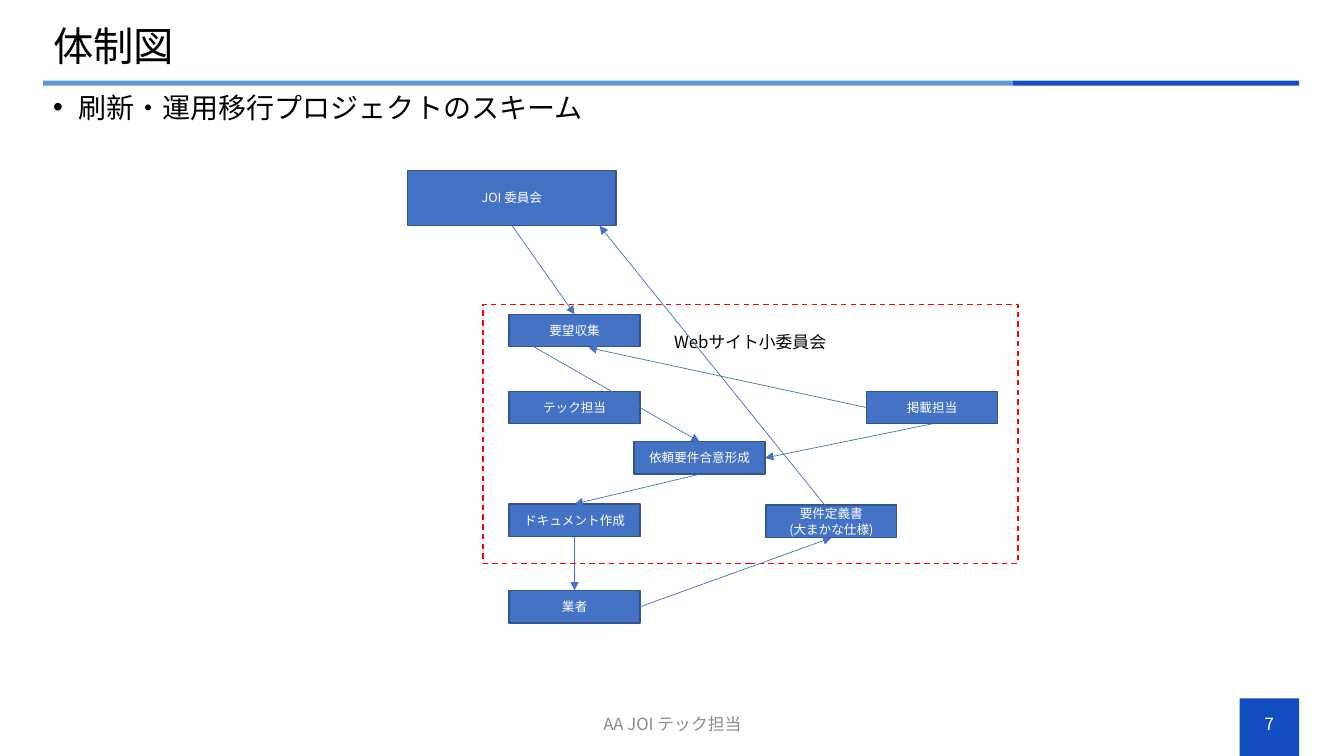
"""Build the project organisation slide."""
from lxml import etree
from pptx import Presentation
from pptx.dml.color import RGBColor
from pptx.enum import dml, shapes, text
from pptx.oxml import ns
from pptx.util import Cm, Pt

FONT = "Noto Sans CJK JP"
BLACK, WHITE, GREY = "000000", "FFFFFF", "8C8C8C"
NAVY, SKY, BLUE, EDGE, RED = "134EC1", "5B9BD5", "4472C4", "325491", "FF0000"
LEFT, CENTER = text.PP_ALIGN.LEFT, text.PP_ALIGN.CENTER
TOP, MIDDLE = text.MSO_ANCHOR.TOP, text.MSO_ANCHOR.MIDDLE

TITLE = ("体制図", (1.09, 0.53, 31.65, 1.4))
BULLET = ("刷新・運用移行プロジェクトのスキーム", (1.09, 2.24, 31.65, 1.4))
GROUP = ("Webサイト小委員会", (16.74, 8.23, 4.39, 0.77))
FOOTER = ("AA JOI テック担当", (11.23, 17.73, 11.43, 1.02))
NUMBER = ("7", (31.24, 17.73, 1.5, 1.02))

BARS = [
    (NAVY, (31.24, 17.6, 1.5, 1.45)),
    (SKY, (1.09, 2.03, 24.43, 0.13)),
    (NAVY, (25.52, 2.03, 7.22, 0.13)),
]
FRAME = (12.17, 7.67, 13.49, 6.53)

STEP_SIZE = (3.3, 0.82)
STEPS = {
    "テック担当": (12.83, 9.86),
    "掲載担当": (21.84, 9.86),
    "ドキュメント作成": (12.83, 12.7),
    "依頼要件合意形成": (15.98, 11.13),
    "業者": (12.83, 14.88),
    "要望収集": (12.83, 7.92),
    "要件定義書\n(大まかな仕様)": (19.3, 12.73),
}
COMMITTEE = ("JOI 委員会", (10.27, 4.29, 5.26, 1.39))
SPEC_SHEET = "要件定義書\n(大まかな仕様)"

ABOVE, BESIDE_LEFT, BELOW, BESIDE_RIGHT = range(4)
ARROWS = [
    ((13.23, 8.61), ("依頼要件合意形成", ABOVE)),
    (("依頼要件合意形成", BELOW), ("ドキュメント作成", ABOVE)),
    (("ドキュメント作成", BELOW), ("業者", ABOVE)),
    (("業者", BESIDE_RIGHT), (SPEC_SHEET, BELOW)),
    ((20.83, 12.78), (15.11, 5.69)),
    (("JOI 委員会", BELOW), ("要望収集", ABOVE)),
    (("掲載担当", BESIDE_LEFT), (14.83, 8.76)),
    (("掲載担当", BELOW), ("依頼要件合意形成", BESIDE_RIGHT)),
]


def color(value):
    return RGBColor.from_string(value)


def add_element(parent, tag, **attributes):
    return etree.SubElement(parent, ns.qn(tag), attributes)


def write(box, words, size, ink, align=LEFT, anchor=MIDDLE):
    frame = box.text_frame
    frame.text = words
    frame.word_wrap = True
    frame.vertical_anchor = anchor
    for para in frame.paragraphs:
        para.alignment = align
        for span in para.runs:
            span.font.size = Pt(size)
            span.font.name = FONT
            span.font.color.rgb = color(ink)
            add_element(span.font._element, "a:ea", typeface=FONT)


def add_label(page, item, size, ink, align=LEFT, anchor=MIDDLE):
    words, place = item
    box = page.shapes.add_textbox(*map(Cm, place))
    write(box, words, size, ink, align, anchor)
    return box


def add_rectangle(page, place, fill=None, edge=None):
    box = page.shapes.add_shape(shapes.MSO_SHAPE.RECTANGLE, *map(Cm, place))
    box.shadow.inherit = False
    if fill:
        box.fill.solid()
        box.fill.fore_color.rgb = color(fill)
    else:
        box.fill.background()
    if edge:
        box.line.color.rgb = color(edge)
        box.line.width = Pt(1)
    else:
        box.line.fill.background()
    return box


def add_arrow(page, start, end, boxes):
    arrow = page.shapes.add_connector(shapes.MSO_CONNECTOR.STRAIGHT, 0, 0, 0, 0)
    if start[0] in boxes:
        arrow.begin_connect(boxes[start[0]], start[1])
    else:
        arrow.begin_x, arrow.begin_y = map(Cm, start)
    if end[0] in boxes:
        arrow.end_connect(boxes[end[0]], end[1])
    else:
        arrow.end_x, arrow.end_y = map(Cm, end)
    arrow.line.color.rgb = color(BLUE)
    arrow.line.width = Pt(0.5)
    add_element(arrow.line._get_or_add_ln(), "a:tailEnd", type="triangle")
    add_element(arrow._element.spPr, "a:effectLst")


def add_header(page):
    words, place = TITLE
    title = page.shapes.title
    title.left, title.top, title.width, title.height = map(Cm, place)
    write(title, words, 28.8, BLACK)
    title.text_frame.paragraphs[0].line_spacing = 0.9

    body = add_label(page, BULLET, 20, BLACK, anchor=TOP)
    para = body.text_frame.paragraphs[0]
    para.line_spacing = 0.9
    settings = para._p.get_or_add_pPr()
    settings.set("marL", str(Cm(0.64)))
    settings.set("indent", str(Cm(-0.64)))
    add_element(settings, "a:buFont", typeface="Arial")
    add_element(settings, "a:buChar", char="•")


def add_diagram(page):
    frame = add_rectangle(page, FRAME, edge=RED)
    frame.line.dash_style = dml.MSO_LINE.DASH
    add_label(page, GROUP, 12, BLACK, anchor=TOP)
    places = {name: corner + STEP_SIZE for name, corner in STEPS.items()}
    places[COMMITTEE[0]] = COMMITTEE[1]
    boxes = {}
    for name, place in places.items():
        boxes[name] = add_rectangle(page, place, BLUE, EDGE)
        write(boxes[name], name, 9, WHITE, CENTER)
    for start, end in ARROWS:
        add_arrow(page, start, end, boxes)


def main():
    deck = Presentation()
    deck.slide_width, deck.slide_height = Cm(33.87), Cm(19.05)
    page = deck.slides.add_slide(deck.slide_layouts[5])
    for fill, place in BARS:
        add_rectangle(page, place, fill)
    add_header(page)
    add_label(page, NUMBER, 12, WHITE, CENTER)
    add_label(page, FOOTER, 12, GREY, CENTER)
    add_diagram(page)
    deck.save("out.pptx")


if __name__ == "__main__":
    main()
